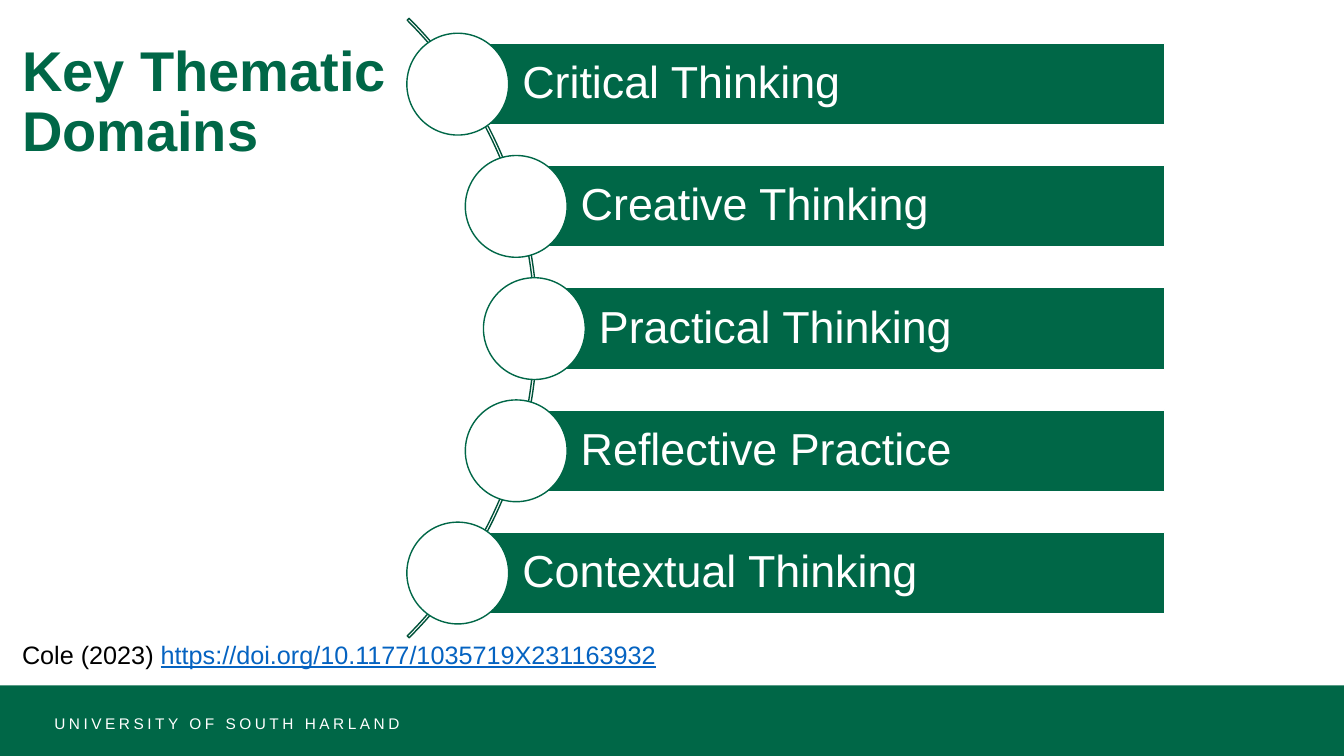
from pptx import Presentation
from pptx.dml.color import RGBColor
from pptx.enum.shapes import MSO_SHAPE
from pptx.enum.text import MSO_ANCHOR, PP_ALIGN
from pptx.util import Inches, Pt

RECTANGLE, OVAL, ARC = MSO_SHAPE.RECTANGLE, MSO_SHAPE.OVAL, MSO_SHAPE.BLOCK_ARC
TOP, MIDDLE, LEFT = MSO_ANCHOR.TOP, MSO_ANCHOR.MIDDLE, PP_ALIGN.LEFT

COLORS = {"green": "006747", "dark": "005239", "white": "FFFFFF",
          "black": "000000", "link": "0563C1"}
TITLE = "Key Thematic Domains"
FOOTER = "UNIVERSITY OF SOUTH HARLAND"
CITATION = [("Cole (2023) ", "black", False),
            ("https://doi.org/10.1177/1035719X231163932", "link", True)]
DOMAINS = [("Critical Thinking", 4.54), ("Creative Thinking", 5.12),
           ("Practical Thinking", 5.3), ("Reflective Practice", 5.12),
           ("Contextual Thinking", 4.54)]
BAR_RIGHT, BAR_HEIGHT, FIRST_CENTER, PITCH = 11.55, 0.81, 0.835, 1.2125
CIRCLE = 1.01
ARC_BOX = (-3.36, -1.09, 8.69, 8.69)
ARC_ADJUSTMENTS = (189, 27, 0.003)
BAR_INSETS = {"margin_left": 0.64, "margin_right": 0.09,
              "margin_top": 0.09, "margin_bottom": 0.09}


def rgb(name):
    return RGBColor.from_string(COLORS[name])


def add_part(slide, kind, box, fill=None, line=None):
    shape = slide.shapes.add_shape(kind, *map(Inches, box))
    shape.shadow.inherit = False
    if fill:
        shape.fill.solid()
        shape.fill.fore_color.rgb = rgb(fill)
    else:
        shape.fill.background()
    if line:
        shape.line.color.rgb = rgb(line)
        shape.line.width = Pt(1)
    else:
        shape.line.fill.background()
    return shape


def write(shape, runs, size, anchor=MIDDLE, line_spacing=1.0, bold=False):
    frame = shape.text_frame
    frame.word_wrap = True
    frame.vertical_anchor = anchor
    paragraph = frame.paragraphs[0]
    paragraph.alignment = LEFT
    paragraph.line_spacing = line_spacing
    for text, color, underline in runs:
        run = paragraph.add_run()
        run.text = text
        run.font.color.rgb = rgb(color)
        font_format = {"name": "Arial", "size": Pt(size),
                       "bold": bold, "underline": underline}
        for attribute, value in font_format.items():
            setattr(run.font, attribute, value)
    return paragraph


def add_text(slide, box, runs, size, **options):
    return write(slide.shapes.add_textbox(*map(Inches, box)), runs, size, **options)


def add_domain(slide, index, label, left):
    center = FIRST_CENTER + index * PITCH
    bar = add_part(slide, RECTANGLE, (left, center - BAR_HEIGHT / 2,
                                      BAR_RIGHT - left, BAR_HEIGHT), "green", "white")
    for attribute, inset in BAR_INSETS.items():
        setattr(bar.text_frame, attribute, Inches(inset))
    write(bar, [(label, "white", False)], 32, line_spacing=0.9)
    add_part(slide, OVAL, (left - CIRCLE / 2, center - CIRCLE / 2, CIRCLE, CIRCLE),
             "white", "green")


def main():
    """Build the slide of key thematic domains."""
    presentation = Presentation()
    presentation.slide_width, presentation.slide_height = Inches(13.33), Inches(7.5)
    slide = presentation.slides.add_slide(presentation.slide_layouts[6])

    add_part(slide, RECTANGLE, (0, 6.8, 13.33, 0.7), "green")
    add_text(slide, (0.12, 0, 4.08, 2.05), [(TITLE, "green", False)], 40,
             line_spacing=0.9, bold=True)
    footer = add_text(slide, (0.44, 7.03, 8.82, 0.3), [(FOOTER, "white", False)], 11)
    footer.runs[0]._r.get_or_add_rPr().set("spc", "250")
    add_text(slide, (0.12, 6.29, 7.22, 0.4), CITATION, 18, anchor=TOP)

    arc = add_part(slide, ARC, ARC_BOX, line="dark")
    for index, value in enumerate(ARC_ADJUSTMENTS):
        arc.adjustments[index] = value
    for index, (label, left) in enumerate(DOMAINS):
        add_domain(slide, index, label, left)
    presentation.save("out.pptx")


if __name__ == "__main__":
    main()
